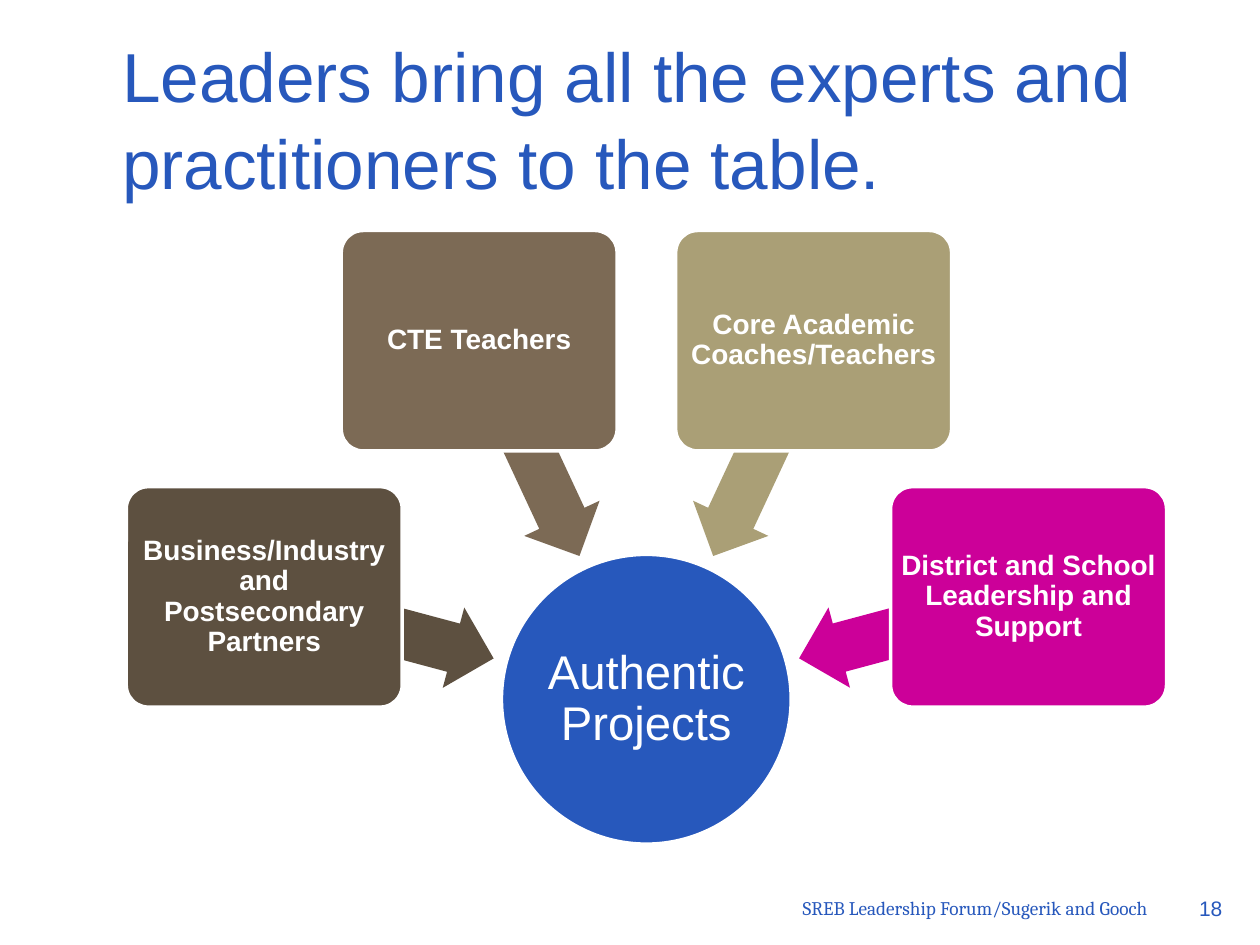
"""Build a slide of four groups of experts converging on authentic projects."""
from math import cos, radians, sin

from pptx import Presentation
from pptx.dml.color import RGBColor
from pptx.enum.shapes import MSO_SHAPE
from pptx.enum.text import MSO_ANCHOR, PP_ALIGN
from pptx.util import Inches, Pt

ELLIPSE, CARD, ARROW = MSO_SHAPE.OVAL, MSO_SHAPE.ROUNDED_RECTANGLE, MSO_SHAPE.LEFT_ARROW
LEFT, CENTER, RIGHT = PP_ALIGN.LEFT, PP_ALIGN.CENTER, PP_ALIGN.RIGHT
MIDDLE = MSO_ANCHOR.MIDDLE

BLUE, WHITE = "2758BC", "FFFFFF"
TEXT_BOXES = [
    ("Leaders bring all the experts and practitioners to the table.",
     (0.87, 0.3, 8.51, 1.25), "Arial", 39.6, LEFT, 1.04),
    ("SREB Leadership Forum/Sugerik and Gooch",
     (5.08, 6.98, 4.13, 0.45), "Cambria", 11, RIGHT, 1),
    ("18", (9.23, 6.98, 0.57, 0.45), "Arial", 12, RIGHT, 1),
]
HUB = "Authentic Projects"
GROUPS = [
    ("Business/Industry and Postsecondary Partners", "5D5040"),
    ("CTE Teachers", "7C6A55"),
    ("Core Academic Coaches/Teachers", "AA9F76"),
    ("District and School Leadership and Support", "CC0099"),
]
HUB_CENTER, HUB_SIZE = (5.13, 5.55), (2.3, 2.3)
CARD_SIZE, CARD_RADIUS = (2.19, 1.75), 3.14
ARROW_SIZE, ARROW_RADIUS = (1.89, 0.66), 2.2
FIRST_ANGLE, ANGLE_STEP = 195, 50


def color(value):
    return RGBColor.from_string(value)


def write(shape, text, font_name, size, font_color, alignment, spacing, bold=False):
    text_frame = shape.text_frame
    text_frame.text = text
    text_frame.word_wrap = True
    text_frame.vertical_anchor = MIDDLE
    paragraph = text_frame.paragraphs[0]
    paragraph.alignment = alignment
    paragraph.line_spacing = spacing
    font = paragraph.runs[0].font
    font.name, font.size, font.bold = font_name, Pt(size), bold
    font.color.rgb = color(font_color)


def add_centered(slide, kind, center, size, fill):
    left, top = (middle - length / 2 for middle, length in zip(center, size))
    shape = slide.shapes.add_shape(kind, *map(Inches, (left, top, *size)))
    shape.shadow.inherit = False
    shape.fill.solid()
    shape.fill.fore_color.rgb = color(fill)
    shape.line.fill.background()
    return shape


def add_label(shape, text, size, inset, bold=False):
    shape.line.color.rgb = color(WHITE)
    shape.line.width = Pt(2)
    text_frame = shape.text_frame
    text_frame.margin_left = text_frame.margin_right = Inches(inset)
    text_frame.margin_top = text_frame.margin_bottom = Inches(inset)
    write(shape, text, "Arial", size, WHITE, CENTER, 0.9, bold)


def around_hub(angle, radius):
    x, y = HUB_CENTER
    return x + radius * cos(radians(angle)), y + radius * sin(radians(angle))


def main():
    presentation = Presentation()
    presentation.slide_width, presentation.slide_height = Inches(10), Inches(7.5)
    slide = presentation.slides.add_slide(presentation.slide_layouts[6])

    for text, box, font_name, size, alignment, spacing in TEXT_BOXES:
        text_box = slide.shapes.add_textbox(*map(Inches, box))
        write(text_box, text, font_name, size, BLUE, alignment, spacing)

    hub = add_centered(slide, ELLIPSE, HUB_CENTER, HUB_SIZE, BLUE)
    add_label(hub, HUB, 27, 0.02)

    for index, (text, fill) in enumerate(GROUPS):
        angle = FIRST_ANGLE + index * ANGLE_STEP
        arrow = add_centered(slide, ARROW, around_hub(angle, ARROW_RADIUS), ARROW_SIZE, fill)
        arrow.rotation = angle
        arrow.adjustments[0], arrow.adjustments[1] = 0.6, 0.5
        card = add_centered(slide, CARD, around_hub(angle, CARD_RADIUS), CARD_SIZE, fill)
        card.adjustments[0] = 0.1
        add_label(card, text, 16, 0.03, bold=True)

    presentation.save("out.pptx")


if __name__ == "__main__":
    main()
